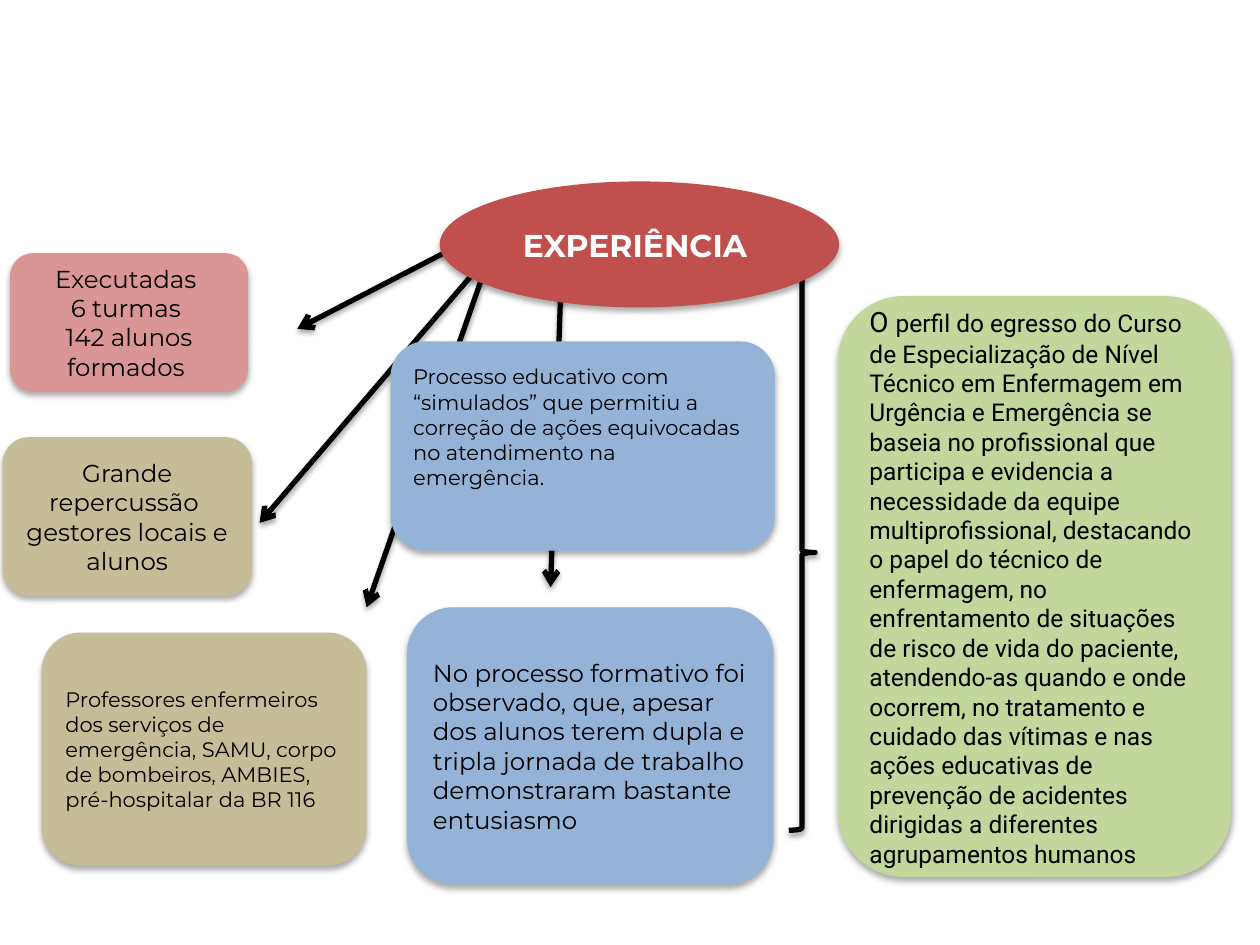
import pptx
import pptx.util
import pptx.dml.color
import pptx.enum.shapes
import pptx.enum.text
import pptx.oxml
import pptx.oxml.ns

Inches, Pt = pptx.util.Inches, pptx.util.Pt
KIND = pptx.enum.shapes.MSO_SHAPE
ALIGN = pptx.enum.text.PP_ALIGN
COLORS = {
    "black": "000000", "white": "FFFFFF", "red": "C0504D", "pink": "D99694",
    "tan": "C4BD97", "blue": "95B3D7", "green": "C3D69B",
}
FONT = "Montserrat"

PROFILE = (
    "perfil do egresso do Curso de Especialização de Nível Técnico em Enfermagem "
    "em Urgência e Emergência se baseia no profissional que participa e evidencia "
    "a necessidade da equipe multiprofissional, destacando o papel do técnico de "
    "enfermagem, no enfrentamento de situações de risco de vida do paciente, "
    "atendendo-as quando e onde ocorrem, no tratamento e cuidado das vítimas e nas "
    "ações educativas de prevenção de acidentes dirigidas a diferentes "
    "agrupamentos humanos"
)
# Arrows: start and end points
ARROWS = [
    (4.46, 2.02, 4.37, 4.66),
    (4.03, 1.85, 2.06, 4.15),
    (3.89, 2.02, 2.91, 4.82),
    (3.83, 1.85, 2.36, 2.61),
]
# Boxes: place, fill, text size, alignment, paragraphs
BOXES = [
    ((0.08, 2.01, 1.89, 1.1), "pink", 14, ALIGN.CENTER,
     ["Executadas ", "6 turmas ", "142 alunos formados "]),
    ((0.02, 3.47, 1.98, 1.26), "tan", 14, ALIGN.CENTER,
     ["Grande repercussão ", "gestores locais e alunos"]),
    ((3.23, 4.82, 2.91, 2.2), "blue", 14, ALIGN.LEFT,
     ["No processo formativo foi observado, que, apesar dos alunos terem dupla e "
      "tripla jornada de trabalho demonstraram bastante entusiasmo"]),
    ((3.1, 2.71, 3.05, 1.66), "blue", 12, ALIGN.LEFT,
     ["Processo educativo com “simulados” que permitiu a correção de ações "
      "equivocadas no atendimento na emergência."]),
    ((0.33, 5.02, 2.58, 1.85), "tan", 12, ALIGN.LEFT,
     ["Professores enfermeiros dos serviços de emergência, SAMU, corpo de "
      "bombeiros, AMBIES, pré-hospitalar da BR 116"]),
]


def rgb(name):
    return pptx.dml.color.RGBColor.from_string(COLORS[name])


def shade(item, alpha, blur, dist):
    """Soft shadow straight below; call it once fill and line are set."""
    item.element.spPr.append(pptx.oxml.parse_xml(
        f'<a:effectLst {pptx.oxml.ns.nsdecls("a")}>'
        f'<a:outerShdw blurRad="{Pt(blur)}" dist="{Pt(dist)}" dir="5400000" '
        f'rotWithShape="0"><a:srgbClr val="{COLORS["black"]}">'
        f'<a:alpha val="{alpha * 1000}"/></a:srgbClr></a:outerShdw></a:effectLst>'))


def stroke(item):
    item.line.color.rgb = rgb("black")
    item.line.width = Pt(3)


def style(font, size, color="black", name=FONT, bold=False):
    font.size, font.name, font.bold = Pt(size), name, bold
    font.color.rgb = rgb(color)


def add_box(slide, place, fill, kind=KIND.ROUNDED_RECTANGLE):
    box = slide.shapes.add_shape(kind, *map(Inches, place))
    box.fill.solid()
    box.fill.fore_color.rgb = rgb(fill)
    box.line.fill.background()
    shade(box, 32, 3.5, 2.2)
    box.text_frame.word_wrap = True
    box.text_frame.vertical_anchor = pptx.enum.text.MSO_ANCHOR.MIDDLE
    return box


def add_text(box, lines, size, align, **look):
    frame = box.text_frame
    for i, line in enumerate(lines):
        para = frame.add_paragraph() if i else frame.paragraphs[0]
        para.text = line
        para.alignment = align
        style(para.font, size, **look)


def add_profile(slide):
    box = add_box(slide, (6.65, 2.35, 3.12, 4.61), "green")
    para = box.text_frame.paragraphs[0]
    para.alignment = ALIGN.LEFT
    for text, size in (("O ", 16), (PROFILE, 14)):
        run = para.add_run()
        run.text = text
        style(run.font, size, name="Roboto")


def add_arrow(slide, ends):
    arrow = slide.shapes.add_connector(
        pptx.enum.shapes.MSO_CONNECTOR.STRAIGHT, *map(Inches, ends))
    stroke(arrow)
    line = arrow.element.spPr.find(pptx.oxml.ns.qn("a:ln"))
    line.append(pptx.oxml.parse_xml(
        f'<a:tailEnd {pptx.oxml.ns.nsdecls("a")} type="arrow"/>'))
    shade(arrow, 35, 3.1, 1.8)


def add_brace(slide, place):
    brace = slide.shapes.add_shape(KIND.RIGHT_BRACE, *map(Inches, place))
    brace.fill.background()
    stroke(brace)
    shade(brace, 35, 3.1, 1.8)


def main():
    deck = pptx.Presentation()
    deck.slide_width, deck.slide_height = Inches(10), Inches(7.5)
    slide = deck.slides.add_slide(deck.slide_layouts[6])

    # Graduate profile, then the links behind the boxes
    add_profile(slide)
    for ends in ARROWS:
        add_arrow(slide, ends)
    add_brace(slide, (6.26, 2.18, 0.21, 4.41))

    # Experience boxes
    for place, fill, size, align, lines in BOXES:
        box = add_box(slide, place, fill)
        add_text(box, lines, size, align)
        if lines[0].startswith("Processo"):
            box.text_frame.margin_bottom = Inches(0.35)  # lifts the text

    # Central topic
    topic = add_box(slide, (3.49, 1.44, 3.17, 1), "red", KIND.OVAL)
    add_text(topic, ["EXPERIÊNCIA "], 18, ALIGN.CENTER, color="white", bold=True)

    deck.save("out.pptx")


if __name__ == "__main__":
    main()
